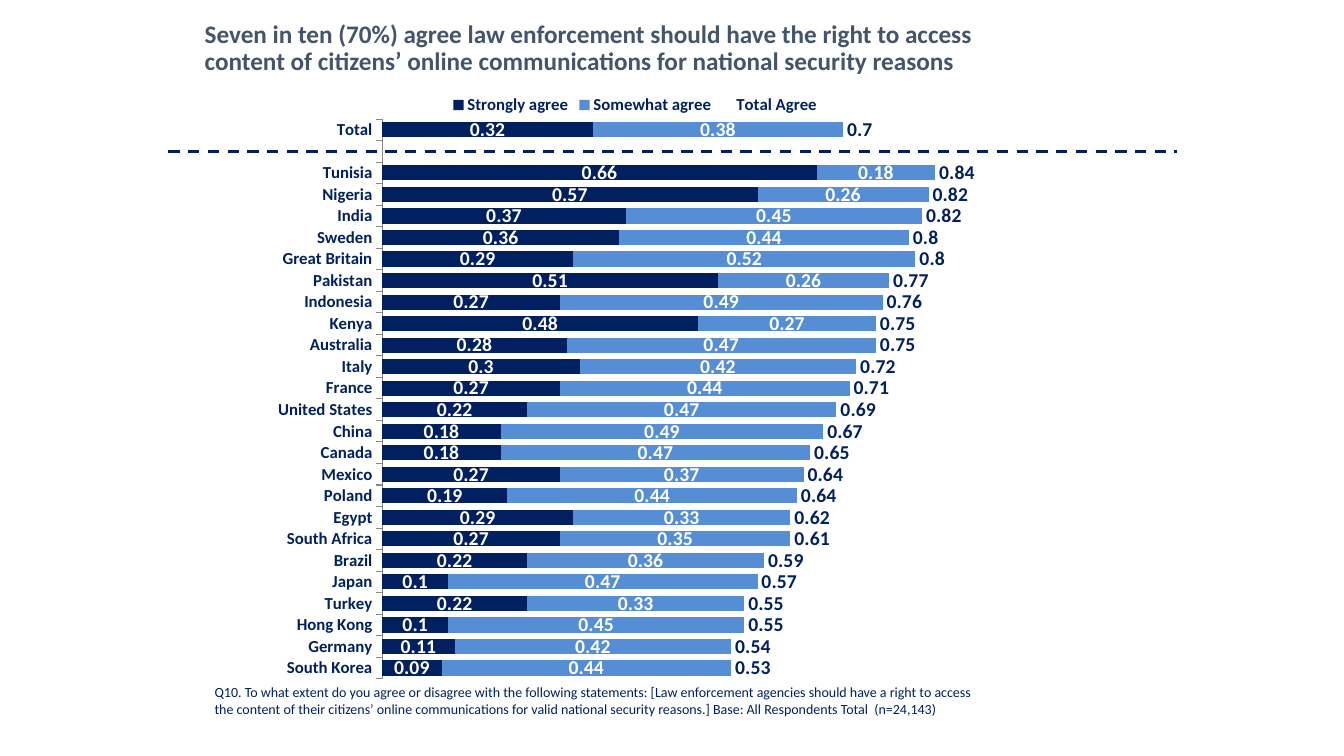
"""Build a slide with a stacked bar chart of agreement by country."""
from dataclasses import dataclass
from typing import Optional

from lxml.etree import SubElement
from pptx import Presentation
from pptx.chart.chart import Chart
from pptx.chart.data import CategoryChartData
from pptx.dml.color import RGBColor
from pptx.enum.chart import XL_CHART_TYPE, XL_LABEL_POSITION, XL_LEGEND_POSITION, XL_TICK_MARK
from pptx.enum.dml import MSO_LINE
from pptx.enum.shapes import MSO_CONNECTOR
from pptx.enum.text import MSO_ANCHOR
from pptx.oxml import parse_xml
from pptx.oxml.ns import nsdecls, qn
from pptx.slide import Slide
from pptx.text.text import Font
from pptx.util import Inches, Pt

COLORS = {"navy": "002060", "blue": "558ED5", "slate": "44546A", "white": "FFFFFF", "gray": "868686"}
FONT_NAME = "Calibri"
PLOT_AREA = {"x": 0.2, "y": 0.059, "w": 0.781, "h": 0.93}


@dataclass(frozen=True)
class AgreementSeries:
    name: str
    fill: Optional[str]
    label_color: str
    label_position: XL_LABEL_POSITION


@dataclass(frozen=True)
class CountryRow:
    name: str
    strongly: Optional[float] = None
    somewhat: Optional[float] = None
    total: Optional[float] = None


SERIES = [
    AgreementSeries("Strongly agree", "navy", "white", XL_LABEL_POSITION.CENTER),
    AgreementSeries("Somewhat agree", "blue", "white", XL_LABEL_POSITION.CENTER),
    AgreementSeries("Total Agree", None, "navy", XL_LABEL_POSITION.INSIDE_BASE),
]

ROWS = [
    CountryRow("Total", 0.32, 0.38, 0.7),
    CountryRow(""),
    CountryRow("Tunisia", 0.66, 0.18, 0.84),
    CountryRow("Nigeria", 0.57, 0.26, 0.82),
    CountryRow("India", 0.37, 0.45, 0.82),
    CountryRow("Sweden", 0.36, 0.44, 0.8),
    CountryRow("Great Britain", 0.29, 0.52, 0.8),
    CountryRow("Pakistan", 0.51, 0.26, 0.77),
    CountryRow("Indonesia", 0.27, 0.49, 0.76),
    CountryRow("Kenya", 0.48, 0.27, 0.75),
    CountryRow("Australia", 0.28, 0.47, 0.75),
    CountryRow("Italy", 0.3, 0.42, 0.72),
    CountryRow("France", 0.27, 0.44, 0.71),
    CountryRow("United States", 0.22, 0.47, 0.69),
    CountryRow("China", 0.18, 0.49, 0.67),
    CountryRow("Canada", 0.18, 0.47, 0.65),
    CountryRow("Mexico", 0.27, 0.37, 0.64),
    CountryRow("Poland", 0.19, 0.44, 0.64),
    CountryRow("Egypt", 0.29, 0.33, 0.62),
    CountryRow("South Africa", 0.27, 0.35, 0.61),
    CountryRow("Brazil", 0.22, 0.36, 0.59),
    CountryRow("Japan", 0.1, 0.47, 0.57),
    CountryRow("Turkey", 0.22, 0.33, 0.55),
    CountryRow("Hong Kong", 0.1, 0.45, 0.55),
    CountryRow("Germany", 0.11, 0.42, 0.54),
    CountryRow("South Korea", 0.09, 0.44, 0.53),
]


def rgb(color: str) -> RGBColor:
    return RGBColor.from_string(COLORS[color])


def set_font(font: Font, size: float, color: str, bold: bool = True) -> None:
    font.name = FONT_NAME
    font.size = Pt(size)
    font.bold = bold
    font.color.rgb = rgb(color)


def add_text(slide: Slide, text: str, *, left: float, top: float, width: float, height: float,
             size: float, color: str, bold: bool = False, anchor: MSO_ANCHOR = MSO_ANCHOR.TOP,
             line_spacing: Optional[float] = None, inset: Optional[float] = None) -> None:
    shape = slide.shapes.add_textbox(Inches(left), Inches(top), Inches(width), Inches(height))
    frame = shape.text_frame
    frame.word_wrap = True
    frame.vertical_anchor = anchor
    if inset is not None:
        frame.margin_left = frame.margin_right = Inches(inset)
        frame.margin_top = frame.margin_bottom = Inches(inset)
    paragraph = frame.paragraphs[0]
    paragraph.line_spacing = line_spacing
    run = paragraph.add_run()
    run.text = text
    set_font(run.font, size, color, bold)


def place_plot_area(chart: Chart) -> None:
    plot_area = chart.plots[0]._element.getparent()
    for layout in plot_area.findall(qn("c:layout")):
        plot_area.remove(layout)
    layout = parse_xml(f"<c:layout {nsdecls('c')}><c:manualLayout/></c:layout>")
    settings = {"layoutTarget": "inner", "xMode": "edge", "yMode": "edge", **PLOT_AREA}
    for name, value in settings.items():
        SubElement(layout[0], qn(f"c:{name}")).set("val", str(value))
    plot_area.insert(0, layout)


def add_agreement_chart(slide: Slide) -> None:
    data = CategoryChartData()
    data.categories = [row.name for row in ROWS]
    columns = zip(*((row.strongly, row.somewhat, row.total) for row in ROWS))
    for style, values in zip(SERIES, columns):
        data.add_series(style.name, values)
    chart = slide.shapes.add_chart(XL_CHART_TYPE.BAR_STACKED, Inches(2.12), Inches(0.83),
                                   Inches(8.36), Inches(5.97), data).chart
    chart.has_title = False
    chart.font.name = FONT_NAME
    chart.font.size = Pt(18)
    chart.has_legend = True
    chart.legend.position = XL_LEGEND_POSITION.TOP
    chart.legend.include_in_layout = False
    set_font(chart.legend.font, 12, "navy")

    countries = chart.category_axis
    countries.reverse_order = True
    countries.major_tick_mark = XL_TICK_MARK.OUTSIDE
    countries.format.line.color.rgb = rgb("gray")
    set_font(countries.tick_labels.font, 12, "navy")
    shares = chart.value_axis
    shares.visible = False
    shares.has_major_gridlines = False
    shares.minimum_scale, shares.maximum_scale = 0, 1

    plot = chart.plots[0]
    plot.gap_width, plot.overlap = 42, 100
    plot.vary_by_categories = False
    for style, series in zip(SERIES, plot.series):
        if style.fill:
            series.format.fill.solid()
            series.format.fill.fore_color.rgb = rgb(style.fill)
        else:
            series.format.fill.background()
        labels = series.data_labels
        labels.show_value = True
        labels.position = style.label_position
        set_font(labels.font, 14, style.label_color)
    place_plot_area(chart)


def add_divider(slide: Slide) -> None:
    divider = slide.shapes.add_connector(MSO_CONNECTOR.STRAIGHT, Inches(1.67), Inches(1.5),
                                         Inches(11.67), Inches(1.5))
    divider.line.color.rgb = rgb("navy")
    divider.line.width = Pt(2)
    divider.line.dash_style = MSO_LINE.DASH
    SubElement(divider._element.spPr, qn("a:effectLst"))


def main() -> None:
    presentation = Presentation()
    presentation.slide_width, presentation.slide_height = Inches(13.33), Inches(7.5)
    slide = presentation.slides.add_slide(presentation.slide_layouts[6])
    add_agreement_chart(slide)
    add_text(slide, "Q10. To what extent do you agree or disagree with the following statements: "
             "[Law enforcement agencies should have a right to access the content of their citizens’ "
             "online communications for valid national security reasons.] "
             "Base: All Respondents Total  (n=24,143)",
             left=2.03, top=6.73, width=7.79, height=0.44, size=10, color="navy")
    add_divider(slide)
    add_text(slide, "Seven in ten (70%) agree law enforcement should have the right to access content "
             "of citizens’ online communications for national security reasons",
             left=2.03, top=0.21, width=7.63, height=0.55, size=18, color="slate", bold=True,
             anchor=MSO_ANCHOR.MIDDLE, line_spacing=0.9, inset=0)
    presentation.save("out.pptx")


if __name__ == "__main__":
    main()
